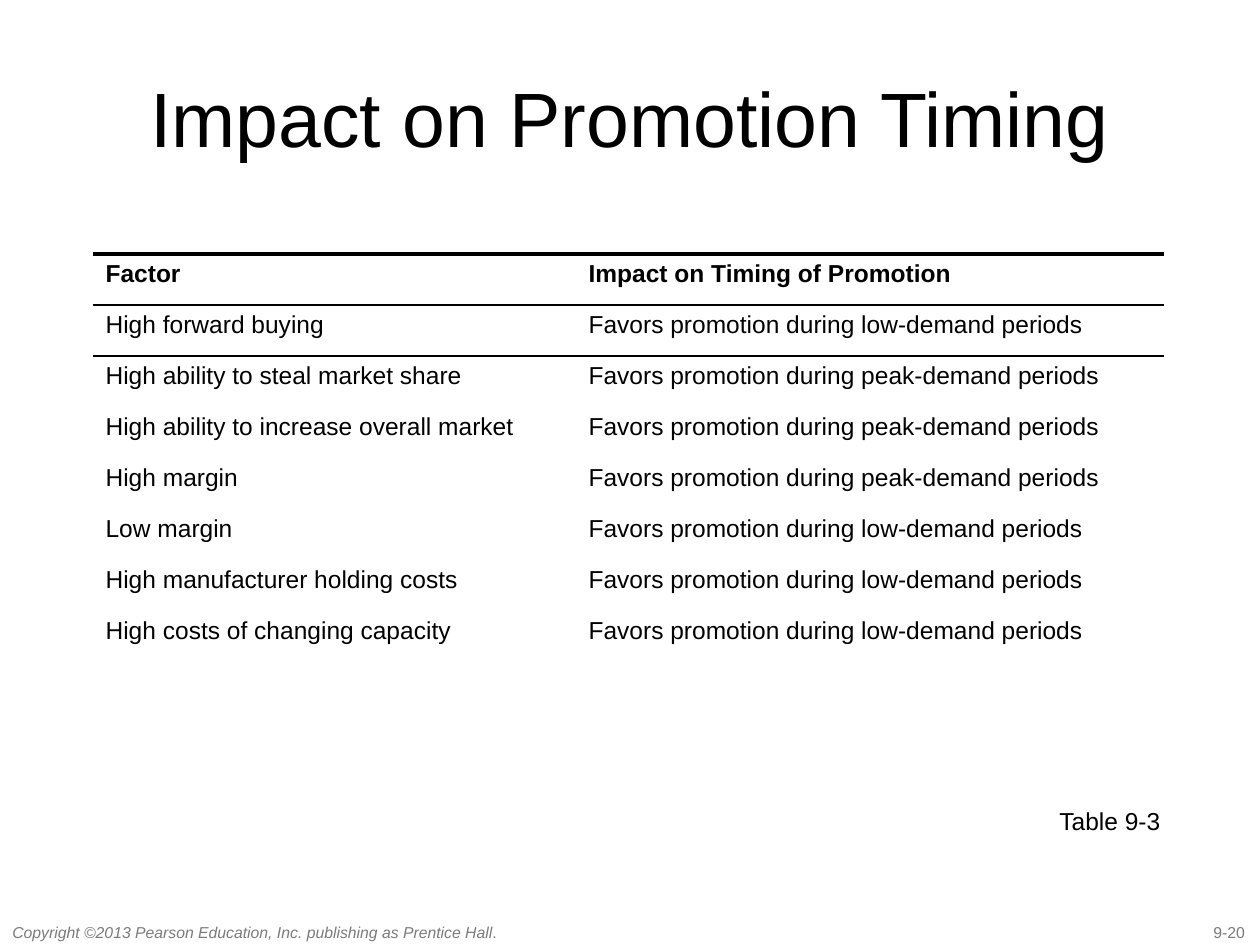
from lxml import etree
from pptx import Presentation, util as u
from pptx.dml.color import RGBColor
from pptx.enum import text
from pptx.oxml.ns import qn

SCALE = 914400 / 126
BLACK, GRAY = "000000", "7B7B7B"
LOW = "Favors promotion during low-demand periods"
PEAK = "Favors promotion during peak-demand periods"
ROWS = [
    ("Factor", "Impact on Timing of Promotion"),
    ("High forward buying", LOW),
    ("High ability to steal market share", PEAK),
    ("High ability to increase overall market", PEAK),
    ("High margin", PEAK),
    ("Low margin", LOW),
    ("High manufacturer holding costs", LOW),
    ("High costs of changing capacity", LOW),
]
RULES = {0: 2.25, 1: 1.5, 2: 1.5}


def px(length):
    return u.Emu(round(length * SCALE))


def color(value):
    return RGBColor.from_string(value)


class SlideBuilder:
    font = "Arial"

    def __init__(self, deck):
        self.page = deck.slides.add_slide(deck.slide_layouts[6])

    def style(self, span, size, fill, bold=False, italic=False):
        span.font.name = self.font
        span.font.size = u.Pt(size)
        span.font.color.rgb = color(fill)
        span.font.bold = bold
        span.font.italic = italic

    def label(self, words, place, size, fill=BLACK, italic=False, wrap=False):
        box = self.page.shapes.add_textbox(*map(px, place))
        frame = box.text_frame
        frame.word_wrap = wrap
        frame.auto_size = text.MSO_AUTO_SIZE.SHAPE_TO_FIT_TEXT
        frame.text = words
        self.style(frame.paragraphs[0].runs[0], size, fill, italic=italic)
        return frame

    def title(self, words, place, size):
        frame = self.label(words, place, size, wrap=True)
        frame.auto_size = text.MSO_AUTO_SIZE.NONE
        frame.vertical_anchor = text.MSO_ANCHOR.MIDDLE
        frame.paragraphs[0].alignment = text.PP_ALIGN.CENTER

    def border(self, cell, side, points):
        line = etree.SubElement(cell._tc.get_or_add_tcPr(), qn(f"a:ln{side}"))
        if points:
            line.set("w", str(u.Pt(points)))
            fill = etree.SubElement(line, qn("a:solidFill"))
            etree.SubElement(fill, qn("a:srgbClr")).set("val", BLACK)
        else:
            etree.SubElement(line, qn("a:noFill"))

    def table(self, rows, left, top, widths, height, size, rules):
        place = (left, top, sum(widths), height * len(rows))
        grid = self.page.shapes.add_table(len(rows), len(widths), *map(px, place)).table
        grid.first_row = grid.horz_banding = False
        for column, width in zip(grid.columns, widths):
            column.width = px(width)
        for index, row in enumerate(rows):
            grid.rows[index].height = px(height)
            for cell, words in zip(grid.rows[index].cells, row):
                cell.text = words
                self.style(cell.text_frame.paragraphs[0].runs[0], size, BLACK, bold=index == 0)
                edges = {"L": 0, "R": 0, "T": rules.get(index), "B": rules.get(index + 1)}
                for side, points in edges.items():
                    self.border(cell, side, points)
                cell.fill.background()


def main():
    deck = Presentation()
    deck.slide_width, deck.slide_height = px(1260), px(945)
    slide = SlideBuilder(deck)
    slide.label("9-20", (1201, 917, 59, 32), 9, GRAY)
    notice = slide.label(
        "Copyright ©2013 Pearson Education, Inc. publishing as Prentice Hall",
        (0, 917, 540, 32), 9, GRAY, italic=True, wrap=True)
    stop = notice.paragraphs[0].add_run()
    stop.text = "."
    slide.style(stop, 9, GRAY)
    slide.title("Impact on Promotion Timing", (63, 38, 1134, 158), 44)
    slide.table(ROWS, 93, 254, (483, 588), 51, 14, RULES)
    slide.label("Table 9-3", (1047, 800, 127, 43), 14)
    deck.save("out.pptx")


if __name__ == "__main__":
    main()
